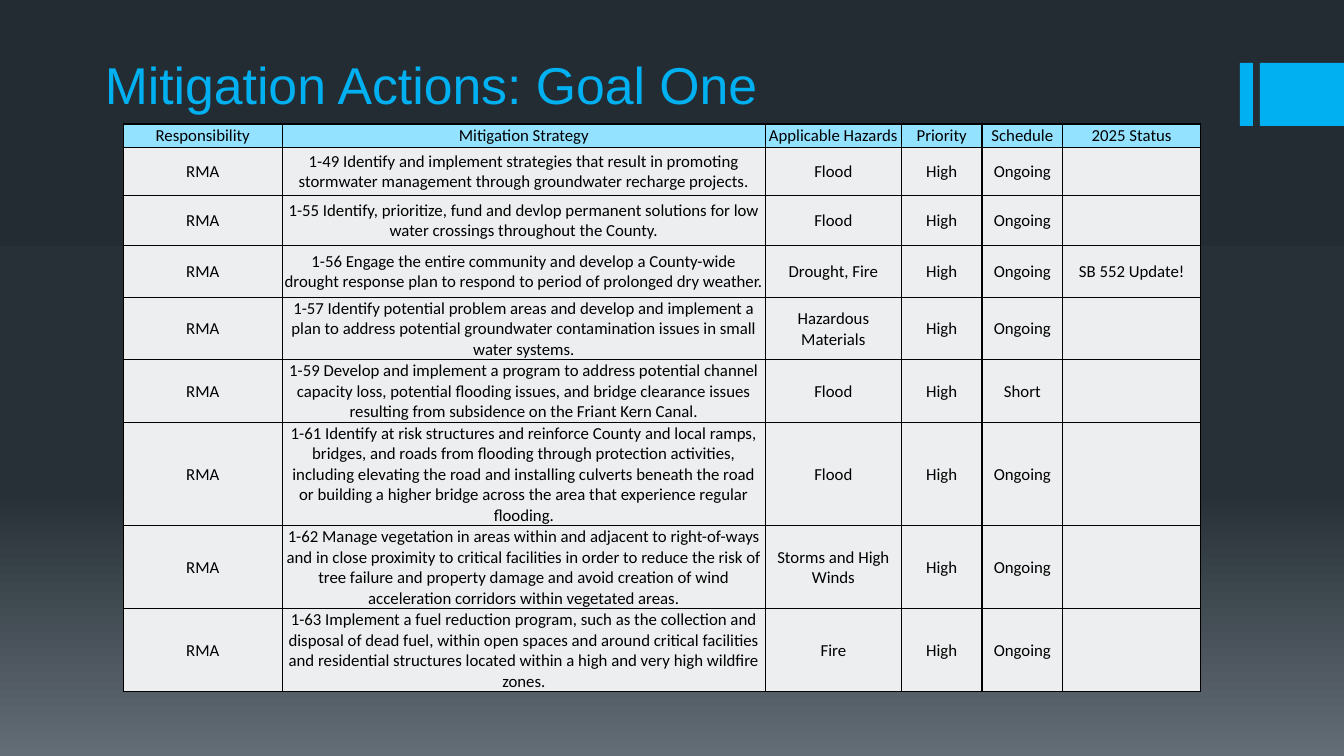
from lxml.etree import SubElement
from pptx import Presentation
from pptx.dml.color import RGBColor
from pptx.enum.shapes import MSO_SHAPE
from pptx.enum.text import MSO_ANCHOR, PP_ALIGN
from pptx.oxml import parse_xml
from pptx.oxml.ns import nsdecls, qn
from pptx.util import Pt

COLORS = {
    "accent": "00B0F0",
    "header": "93E2FF",
    "body": "EDEEEF",
    "ink": "000000",
    "top": "242C33",
    "middle": "273037",
    "bottom": "636D76",
}
BACKGROUND_STOPS = [(0, "top"), (65, "middle"), (100, "bottom")]
COLUMN_WIDTHS = [113.8, 344.9, 97.2, 57.6, 57.6, 98.6]
ROW_HEIGHTS = [16.6, 34.6, 35.3, 37.4, 44.6, 44.6, 73.9, 59.3, 59.3]
HEADERS = ["Responsibility", "Mitigation Strategy", "Applicable Hazards",
           "Priority", "Schedule", "2025 Status"]
ACTIONS = [
    ("1-49 Identify and implement strategies that result in promoting stormwater "
     "management through groundwater recharge projects.", "Flood", "Ongoing", ""),
    ("1-55 Identify, prioritize, fund and devlop permanent solutions for low water "
     "crossings throughout the County.", "Flood", "Ongoing", ""),
    ("1-56 Engage the entire community and develop a County-wide drought response "
     "plan to respond to period of prolonged dry weather.",
     "Drought, Fire", "Ongoing", "SB 552 Update!"),
    ("1-57 Identify potential problem areas and develop and implement a plan to "
     "address potential groundwater contamination issues in small water systems.",
     "Hazardous Materials", "Ongoing", ""),
    ("1-59 Develop and implement a program to address potential channel capacity "
     "loss, potential flooding issues, and bridge clearance issues resulting from "
     "subsidence on the Friant Kern Canal.", "Flood", "Short", ""),
    ("1-61 Identify at risk structures and reinforce County and local ramps, bridges, "
     "and roads from flooding through protection activities, including elevating the "
     "road and installing culverts beneath the road or building a higher bridge across "
     "the area that experience regular flooding.", "Flood", "Ongoing", ""),
    ("1-62 Manage vegetation in areas within and adjacent to right-of-ways and in close "
     "proximity to critical facilities in order to reduce the risk of tree failure and "
     "property damage and avoid creation of wind acceleration corridors within "
     "vegetated areas.", "Storms and High Winds", "Ongoing", ""),
    ("1-63 Implement a fuel reduction program, such as the collection and disposal of "
     "dead fuel, within open spaces and around critical facilities and residential "
     "structures located within a high and very high wildfire zones.",
     "Fire", "Ongoing", ""),
]


def write_text(frame, text, size=12, font="Calibri", color="ink", align=PP_ALIGN.CENTER):
    paragraph = frame.paragraphs[0]
    paragraph.text = text
    paragraph.alignment = align
    paragraph.font.size = Pt(size)
    for run in paragraph.runs:
        run.font.size = Pt(size)
        run.font.name = font
        run.font.bold = False
        run.font.color.rgb = RGBColor.from_string(COLORS[color])


def paint_background(slide):
    fill = slide.background.fill
    fill.gradient()
    fill.gradient_angle = 270
    stop_list = next(slide.element.iter(qn("a:gsLst")))
    for stop in list(stop_list):
        stop_list.remove(stop)
    for position, color in BACKGROUND_STOPS:
        stop = SubElement(stop_list, qn("a:gs"), pos=str(position * 1000))
        SubElement(stop, qn("a:srgbClr"), val=COLORS[color])


def add_accent_bars(slide, left, top, width, height):
    narrow, gap = 9.4, 5
    wide_left = left + narrow + gap
    for bar_left, bar_width in [(left, narrow), (wide_left, left + width - wide_left)]:
        bar = slide.shapes.add_shape(MSO_SHAPE.RECTANGLE, Pt(bar_left), Pt(top),
                                     Pt(bar_width), Pt(height))
        bar.shadow.inherit = False
        bar.fill.solid()
        bar.fill.fore_color.rgb = RGBColor.from_string(COLORS["accent"])
        bar.line.fill.background()


def place_title(slide, left, top, width, height):
    title = slide.shapes.title
    title.left, title.top, title.width, title.height = map(Pt, (left, top, width, height))
    frame = title.text_frame
    frame.word_wrap = True
    frame.vertical_anchor = MSO_ANCHOR.BOTTOM
    write_text(frame, "Mitigation Actions: Goal One", size=37, font="Arial",
               color="accent", align=PP_ALIGN.LEFT)


def add_borders(cell):
    properties = cell._tc.get_or_add_tcPr()
    for index, side in enumerate("LRTB"):
        properties.insert(index, parse_xml(
            f'<a:ln{side} {nsdecls("a")} w="{Pt(1)}"><a:solidFill>'
            f'<a:srgbClr val="{COLORS["ink"]}"/></a:solidFill></a:ln{side}>'))


def format_cell(cell, text, fill, inset):
    cell.margin_left = cell.margin_right = cell.margin_top = Pt(inset)
    cell.margin_bottom = Pt(0)
    cell.vertical_anchor = MSO_ANCHOR.MIDDLE
    cell.fill.solid()
    cell.fill.fore_color.rgb = RGBColor.from_string(COLORS[fill])
    add_borders(cell)
    write_text(cell.text_frame, text)


def add_action_table(slide, left, top):
    rows = [HEADERS] + [("RMA", strategy, hazard, "High", schedule, status)
                        for strategy, hazard, schedule, status in ACTIONS]
    table = slide.shapes.add_table(len(rows), len(HEADERS), Pt(left), Pt(top),
                                   Pt(sum(COLUMN_WIDTHS)), Pt(sum(ROW_HEIGHTS))).table
    table.first_row = table.horz_banding = False
    for column, width in zip(table.columns, COLUMN_WIDTHS):
        column.width = Pt(width)
    for row_index, (row, height) in enumerate(zip(table.rows, ROW_HEIGHTS)):
        row.height = Pt(height)
        fill, inset = ("body", 0.7) if row_index else ("header", 0)
        for cell, text in zip(row.cells, rows[row_index]):
            format_cell(cell, text, fill, inset)


def main():
    presentation = Presentation()
    presentation.slide_width, presentation.slide_height = Pt(960), Pt(540)
    slide = presentation.slides.add_slide(presentation.slide_layouts[5])
    paint_background(slide)
    add_accent_bars(slide, 885.6, 45, 74.4, 45)
    add_action_table(slide, 88, 88.6)
    place_title(slide, 67.7, 40.3, 768, 45.4)
    presentation.save("out.pptx")


if __name__ == "__main__":
    main()
